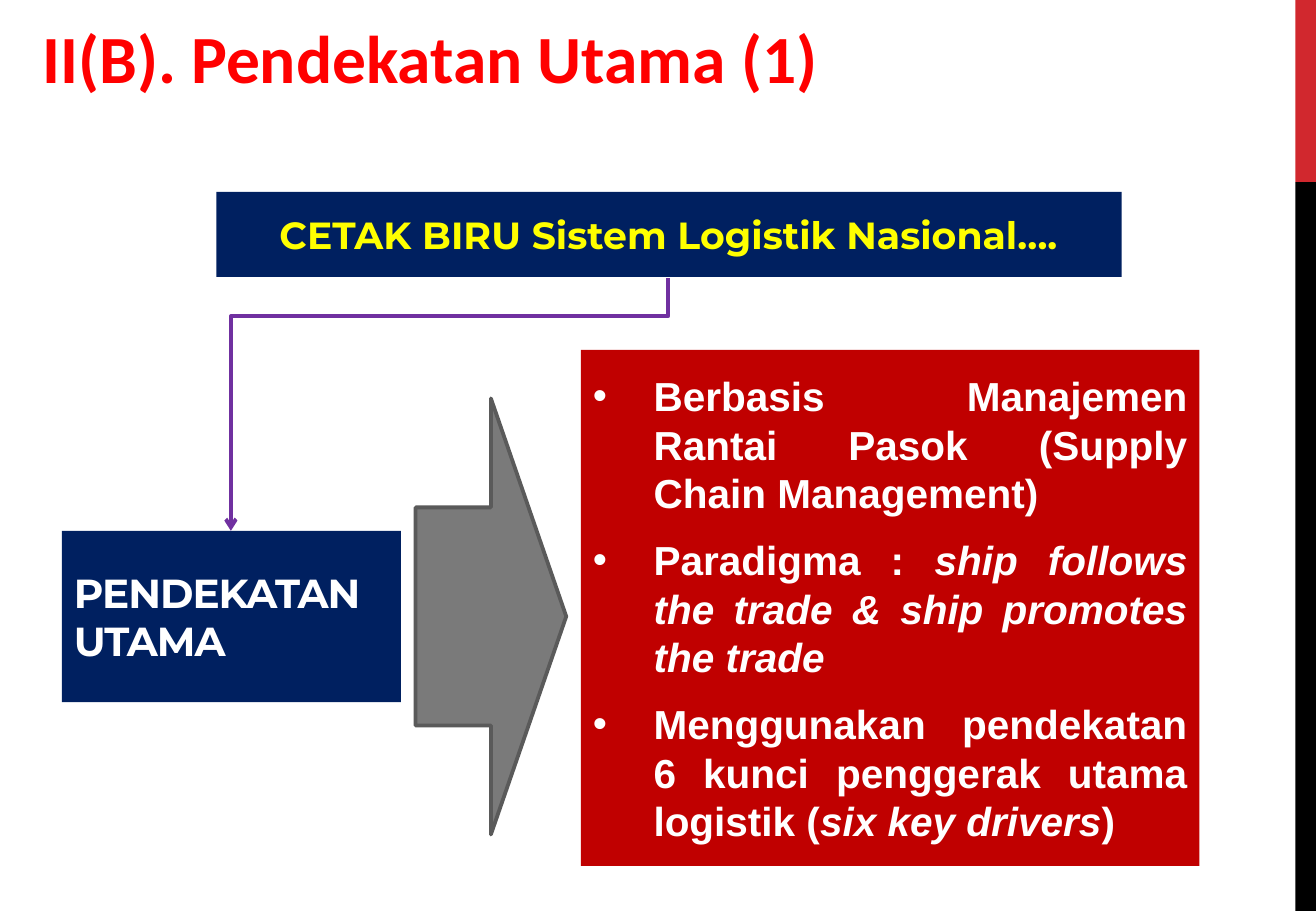
import pptx
import pptx.util
from pptx.dml.color import RGBColor
from pptx.enum.shapes import MSO_CONNECTOR, MSO_SHAPE
from pptx.enum.text import MSO_ANCHOR, PP_ALIGN
from pptx.oxml.ns import qn
from lxml import etree

PX = 9144  # EMU per px, 100 px to the inch
SLIDE_WIDTH, SLIDE_HEIGHT = 1083, 750

WHITE = RGBColor(0xFF, 0xFF, 0xFF)
BLACK = RGBColor(0x00, 0x00, 0x00)
CRIMSON = RGBColor(0xD1, 0x28, 0x2E)
NAVY = RGBColor(0x00, 0x20, 0x60)
DARK_RED = RGBColor(0xC0, 0x00, 0x00)
RED = RGBColor(0xFF, 0x00, 0x00)
YELLOW = RGBColor(0xFF, 0xFF, 0x00)
PURPLE = RGBColor(0x70, 0x30, 0xA0)
GRAY = RGBColor(0x7A, 0x7A, 0x7A)
DARK_GRAY = RGBColor(0x5A, 0x5A, 0x5A)

# Each approach is a list of (text, italic) spans
APPROACHES = [
    [("Berbasis Manajemen Rantai Pasok (Supply Chain Management)", False)],
    [("Paradigma : ", False),
     ("ship follows the trade & ship promotes the trade", True)],
    [("Menggunakan pendekatan 6 kunci penggerak utama logistik (", False),
     ("six key drivers", True), (")", False)],
]


def px(*lengths):
    return [pptx.util.Emu(length * PX) for length in lengths]


def add_block(page, area, fill, kind=MSO_SHAPE.RECTANGLE, outline=None):
    block = page.shapes.add_shape(kind, *px(*area))
    block.shadow.inherit = False
    block.fill.solid()
    block.fill.fore_color.rgb = fill
    if outline is None:
        block.line.fill.background()
    else:
        block.line.color.rgb = outline
        block.line.width = pptx.util.Pt(2.25)
    return block


def style_paragraph(para, name, size, color, align=PP_ALIGN.LEFT):
    para.alignment = align
    para.font.name = name
    para.font.size = pptx.util.Pt(size)
    para.font.bold = True
    para.font.color.rgb = color


def add_label(page, area, text, size, color, align):
    box = add_block(page, area, NAVY)
    box.text_frame.vertical_anchor = MSO_ANCHOR.MIDDLE
    para = box.text_frame.paragraphs[0]
    para.text = text
    style_paragraph(para, "Montserrat", size, color, align)
    return para


def add_heading(page, area, text):
    box = page.shapes.add_textbox(*px(*area))
    box.text_frame.word_wrap = True
    para = box.text_frame.paragraphs[0]
    para.text = text
    para.space_before = pptx.util.Pt(8)
    style_paragraph(para, "Calibri", 40, RED)


def add_bullet(para, indent):
    properties = para._p.get_or_add_pPr()
    properties.set("marL", str(indent * PX))
    properties.set("indent", str(-indent * PX))
    bullet_font = etree.Element(qn("a:buFont"), typeface="Arial")
    bullet = etree.Element(qn("a:buChar"), char="•")
    position = properties.index(properties.find(qn("a:defRPr")))
    properties.insert(position, bullet_font)
    properties.insert(position + 1, bullet)


def add_bullet_panel(page, area, items):
    frame = add_block(page, area, DARK_RED).text_frame
    frame.vertical_anchor = MSO_ANCHOR.MIDDLE
    for index, spans in enumerate(items):
        para = frame.add_paragraph() if index else frame.paragraphs[0]
        for text, italic in spans:
            span = para.add_run()
            span.text = text
            span.font.italic = italic
        style_paragraph(para, "Arial", 24, WHITE, PP_ALIGN.JUSTIFY)
        para.space_before = pptx.util.Pt(4.8)
        para.space_after = pptx.util.Pt(6)
        add_bullet(para, 50)


def add_down_elbow(page, start, end, bend, color):
    """Elbow that leaves downwards, runs left at the bend and drops to its end."""
    # A quarter turn about the centre makes the default elbow vertical.
    center_x, center_y = (start[0] + end[0]) // 2, (start[1] + end[1]) // 2
    half_run, half_drop = (start[0] - end[0]) // 2, (end[1] - start[1]) // 2
    elbow = page.shapes.add_connector(
        MSO_CONNECTOR.ELBOW,
        *px(center_x - half_drop, center_y - half_run,
            center_x + half_drop, center_y + half_run))
    elbow.line.color.rgb = color
    elbow.line.width = pptx.util.Pt(2.25)
    properties = elbow._element.spPr
    properties.find(qn("a:xfrm")).set("rot", str(90 * 60000))
    guides = properties.find(qn("a:prstGeom")).get_or_add_avLst()
    etree.SubElement(guides, qn("a:gd"), name="adj1", fmla=f"val {round(bend * 100000)}")
    etree.SubElement(elbow.line._get_or_add_ln(), qn("a:tailEnd"), type="arrow")
    etree.SubElement(properties, qn("a:effectLst"))


def main():
    deck = pptx.Presentation()
    deck.slide_width, deck.slide_height = px(SLIDE_WIDTH, SLIDE_HEIGHT)
    page = deck.slides.add_slide(deck.slide_layouts[6])

    # Side stripe
    add_block(page, (1066, 0, 17, 150), CRIMSON)
    add_block(page, (1066, 150, 17, 600), BLACK)

    # Main approach, pointing to its list
    approach = add_label(page, (51, 437, 279, 141), "PENDEKATAN\vUTAMA",
                         24, WHITE, PP_ALIGN.LEFT)
    for span in approach.runs:
        span._r.get_or_add_rPr().set("spc", "-60")
    add_bullet_panel(page, (478, 288, 509, 425), APPROACHES)
    add_block(page, (342, 328, 124, 359), GRAY, MSO_SHAPE.RIGHT_ARROW, DARK_GRAY)

    # Blueprint banner, leading to the main approach
    add_label(page, (178, 158, 745, 70), "CETAK BIRU Sistem Logistik Nasional….",
              22.4, YELLOW, PP_ALIGN.CENTER)
    add_down_elbow(page, (550, 229), (190, 437), 0.15, PURPLE)

    # Slide heading
    add_heading(page, (25, 8, 1008, 145), "II(B). Pendekatan Utama (1)")

    deck.save("out.pptx")


if __name__ == "__main__":
    main()
